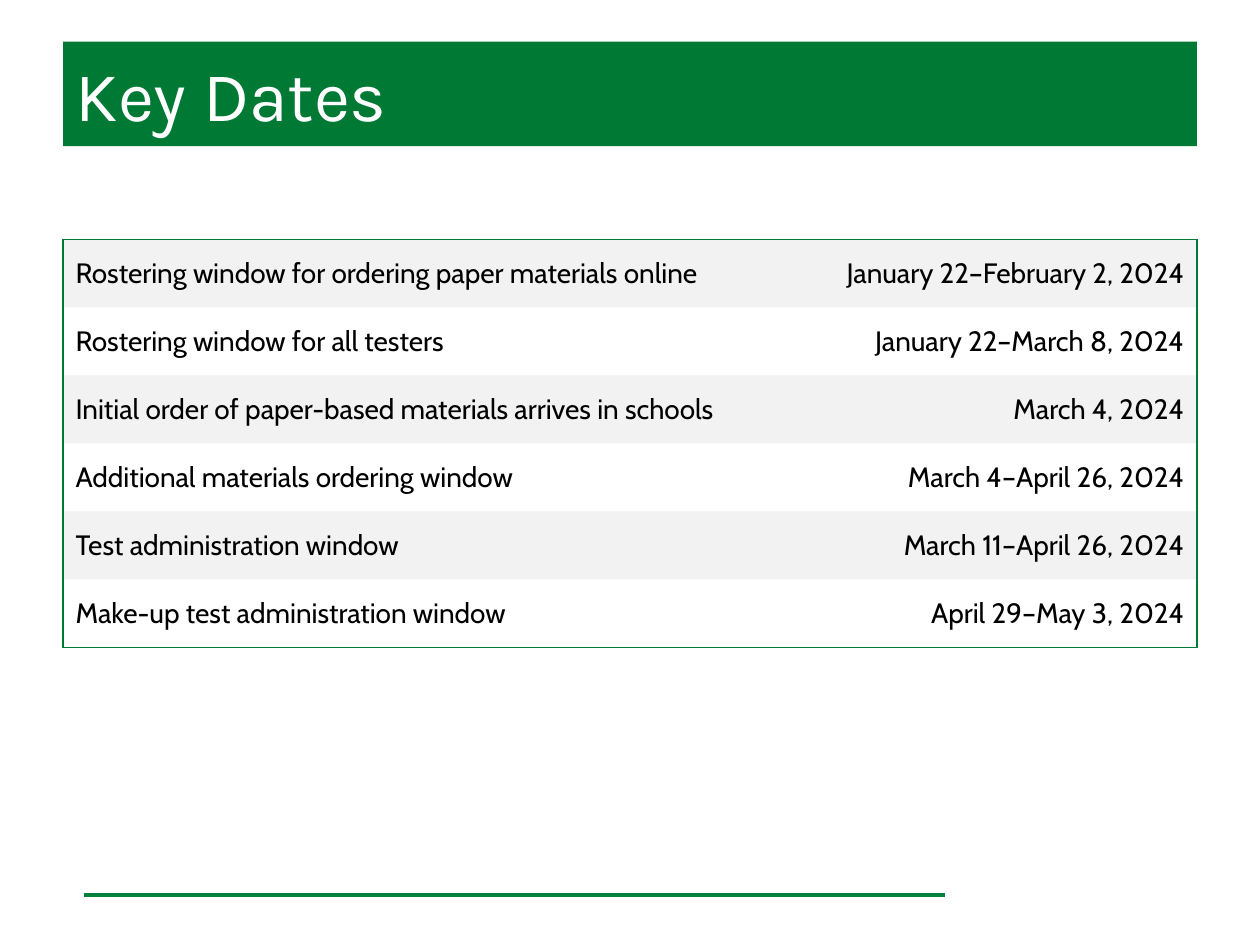
"""Build the Key Dates slide with its schedule table."""
from lxml import etree
from pptx import Presentation
from pptx.dml.color import RGBColor
from pptx.enum.shapes import MSO_CONNECTOR
from pptx.enum.text import MSO_ANCHOR, MSO_AUTO_SIZE, PP_ALIGN
from pptx.oxml.ns import qn
from pptx.util import Inches, Pt

GREEN, RULE_GREEN, GREY = "007935", "00823E", "BFBFBF"
NO_STYLE = "{2D5ABB26-0587-4C30-8999-92F81FD0307C}"
KEY_DATES = [
    ("Rostering window for ordering paper materials online", "January 22–February 2, 2024"),
    ("Rostering window for all testers", "January 22–March 8, 2024"),
    ("Initial order of paper-based materials arrives in schools", "March 4, 2024"),
    ("Additional materials ordering window", "March 4–April 26, 2024"),
    ("Test administration window", "March 11–April 26, 2024"),
    ("Make-up test administration window", "April 29–May 3, 2024"),
]


def rgb(value):
    return RGBColor.from_string(value)


def write(frame, text, font="Cabin", size=16, color="000000", align=PP_ALIGN.LEFT):
    para = frame.paragraphs[0]
    para.alignment = align
    span = para.add_run()
    span.text = text
    span.font.name = font
    span.font.size = Pt(size)
    span.font.color.rgb = rgb(color)


class DatesSlide:
    def __init__(self, deck):
        self.page = deck.slides.add_slide(deck.slide_layouts[5])

    def rule(self, left, right, y):
        line = self.page.shapes.add_connector(
            MSO_CONNECTOR.STRAIGHT, Inches(left), Inches(y), Inches(right), Inches(y))
        line.line.color.rgb = rgb(RULE_GREEN)
        line.line.width = Pt(2.25)
        etree.SubElement(line._element.spPr, qn("a:effectLst"))

    def title(self, text, left, top, width, height):
        box = self.page.shapes.title
        box.left, box.top = Inches(left), Inches(top)
        box.width, box.height = Inches(width), Inches(height)
        box.fill.solid()
        box.fill.fore_color.rgb = rgb(GREEN)
        frame = box.text_frame
        frame.auto_size = MSO_AUTO_SIZE.NONE
        frame.vertical_anchor = MSO_ANCHOR.MIDDLE
        write(frame, text, font="Karla", size=40, color="FFFFFF")

    def shade(self, cell):
        cell.fill.solid()
        cell.fill.fore_color.rgb = rgb(GREY)
        color = cell._tc.tcPr.find(f"{qn('a:solidFill')}/{qn('a:srgbClr')}")
        etree.SubElement(color, qn("a:alpha"), val="20000")

    def border(self, cell, sides):
        for position, side in enumerate(sides):
            edge = etree.Element(qn(f"a:ln{side}"), w=str(Pt(1)))
            fill = etree.SubElement(edge, qn("a:solidFill"))
            etree.SubElement(fill, qn("a:srgbClr"), val=GREEN)
            cell._tc.get_or_add_tcPr().insert(position, edge)

    def schedule(self, rows, left, top, widths, row_height):
        table = self.page.shapes.add_table(
            len(rows), len(widths), Inches(left), Inches(top),
            Inches(sum(widths)), Inches(row_height * len(rows))).table
        table._tbl.tblPr.find(qn("a:tableStyleId")).text = NO_STYLE
        table.first_row = table.horz_banding = False
        for column, width in zip(table.columns, widths):
            column.width = Inches(width)
        for r, texts in enumerate(rows):
            table.rows[r].height = Inches(row_height)
            for c, text in enumerate(texts):
                cell = table.cell(r, c)
                cell.vertical_anchor = MSO_ANCHOR.MIDDLE
                write(cell.text_frame, text, align=PP_ALIGN.RIGHT if c else PP_ALIGN.LEFT)
                if r % 2:
                    cell.fill.background()
                else:
                    self.shade(cell)
                ends = {0: "T", len(rows) - 1: "B"}
                self.border(cell, "LR"[c] + ends.get(r, ""))


def main():
    deck = Presentation()
    deck.slide_width, deck.slide_height = Inches(10), Inches(7.5)
    slide = DatesSlide(deck)
    slide.rule(0.67, 7.5, 7.1)
    slide.title("Key Dates", 0.5, 0.33, 9, 0.83)
    slide.schedule(KEY_DATES, 0.5, 1.9, (5.68, 3.32), 0.54)
    deck.save("out.pptx")


if __name__ == "__main__":
    main()
